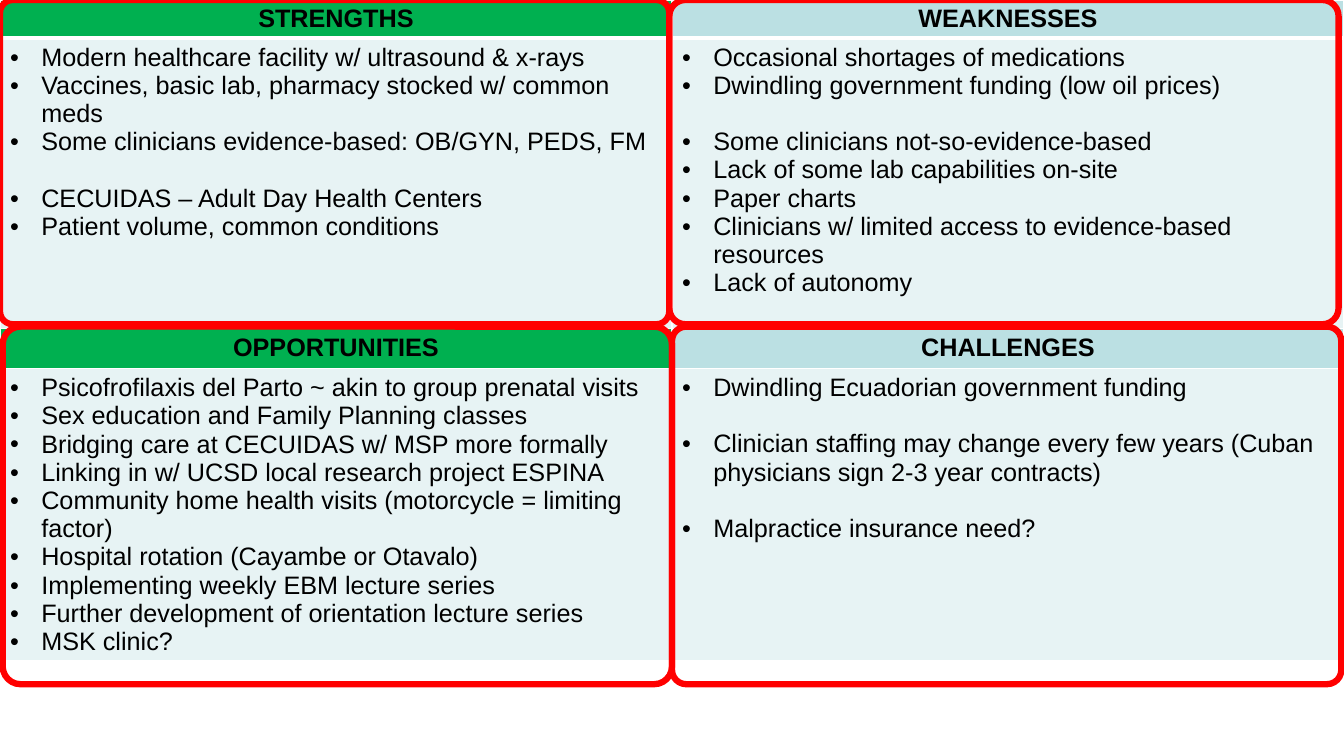
from dataclasses import dataclass

from lxml import etree
from pptx import Presentation
from pptx.dml.color import RGBColor
from pptx.enum.shapes import MSO_SHAPE
from pptx.enum.text import PP_ALIGN
from pptx.oxml.ns import qn
from pptx.slide import Slide
from pptx.table import _Cell
from pptx.util import Inches, Pt

CENTER, LEFT = PP_ALIGN.CENTER, PP_ALIGN.LEFT
ROUNDED = MSO_SHAPE.ROUNDED_RECTANGLE
PAGE_WIDTH, PAGE_HEIGHT = Inches(13.33), Inches(7.5)
GRID_STEPS = 100
ROW_STEPS = (4.8, 38.4, 5.3, 38.4)
FONT, TEXT_SIZE, GAP = "Arial", Pt(18), Pt(20)
BULLET_INDENT = Inches(0.31)
BLACK, WHITE, RED = "000000", "FFFFFF", "FF0000"
GREEN, TEAL, PALE = "00B050", "BBE0E3", "E7F3F4"


@dataclass(frozen=True)
class Quadrant:
    """One SWOT quarter: its heading, groups of bullets, and frame on the grid."""
    heading: str
    color: str
    groups: tuple[tuple[str, ...], ...]
    frame: tuple[float, float, float, float]
    rounding: float


QUADRANTS = (
    Quadrant("STRENGTHS", GREEN, (
        ("Modern healthcare facility w/ ultrasound & x-rays",
         "Vaccines, basic lab, pharmacy stocked w/ common meds",
         "Some clinicians evidence-based: OB/GYN, PEDS, FM"),
        ("CECUIDAS – Adult Day Health Centers",
         "Patient volume, common conditions"),
    ), (0, 0, 49.8, 42.9), 0.04),
    Quadrant("WEAKNESSES", TEAL, (
        ("Occasional shortages of medications",
         "Dwindling government funding (low oil prices)"),
        ("Some clinicians not-so-evidence-based",
         "Lack of some lab capabilities on-site",
         "Paper charts",
         "Clinicians w/ limited access to evidence-based resources",
         "Lack of autonomy"),
    ), (49.8, 0, 49.8, 42.9), 0.05),
    Quadrant("OPPORTUNITIES", GREEN, (
        ("Psicofrofilaxis del Parto ~ akin to group prenatal visits",
         "Sex education and Family Planning classes",
         "Bridging care at CECUIDAS w/ MSP more formally",
         "Linking in w/ UCSD local research project ESPINA",
         "Community home health visits (motorcycle = limiting factor)",
         "Hospital rotation (Cayambe or Otavalo)",
         "Implementing weekly EBM lecture series",
         "Further development of orientation lecture series",
         "MSK clinic?"),
    ), (0.2, 43.2, 49.8, 47.3), 0.05),
    Quadrant("CHALLENGES", TEAL, (
        ("Dwindling Ecuadorian government funding",),
        ("Clinician staffing may change every few years "
         "(Cuban physicians sign 2-3 year contracts)",),
        ("Malpractice insurance need?",),
    ), (50, 43.2, 49.8, 47.3), 0.04),
)


def across(steps: float) -> int:
    """Turn grid columns into a length."""
    return round(PAGE_WIDTH * steps / GRID_STEPS)


def down(steps: float) -> int:
    """Turn grid rows into a length."""
    return round(PAGE_HEIGHT * steps / GRID_STEPS)


def color(code: str) -> RGBColor:
    """Turn a hex string into a colour."""
    return RGBColor.from_string(code)


def style_cell(cell: _Cell, fill: str, top: float, bottom: float) -> None:
    """Fill a cell and give it white borders, widths in points."""
    cell.fill.solid()
    cell.fill.fore_color.rgb = color(fill)
    properties = cell._tc.get_or_add_tcPr()
    borders = (("a:lnL", 1), ("a:lnR", 1), ("a:lnT", top), ("a:lnB", bottom))
    for position, (tag, width) in enumerate(borders):
        border = etree.Element(qn(tag), w=str(Pt(width)))
        solid = etree.SubElement(border, qn("a:solidFill"))
        etree.SubElement(solid, qn("a:srgbClr"), val=WHITE)
        properties.insert(position, border)


def write_lines(cell: _Cell, groups: tuple[tuple[str, ...], ...], heading: bool) -> None:
    """Write a bold heading or bulleted groups that are set apart by a gap."""
    cell.text_frame.text = "\n".join(line for group in groups for line in group)
    openings = [index == 0 for group in groups for index in range(len(group))]
    for index, para in enumerate(cell.text_frame.paragraphs):
        para.alignment = CENTER if heading else LEFT
        if index and openings[index]:
            para.space_before = GAP
        if not heading:
            properties = para._p.get_or_add_pPr()
            properties.set("marL", str(BULLET_INDENT))
            properties.set("indent", str(-BULLET_INDENT))
            etree.SubElement(properties, qn("a:buFont"), typeface=FONT)
            etree.SubElement(properties, qn("a:buChar"), char="•")
        for span in para.runs:
            span.font.name = FONT
            span.font.size = TEXT_SIZE
            span.font.bold = heading
            span.font.color.rgb = color(BLACK)


def add_matrix(page: Slide) -> None:
    """Add the table with a heading row and a bullet row for each pair of quadrants."""
    table = page.shapes.add_table(
        len(ROW_STEPS), 2, 0, 0, PAGE_WIDTH, down(sum(ROW_STEPS))).table
    table.first_row = False
    table.horz_banding = False
    for row, steps in zip(table.rows, ROW_STEPS):
        row.height = down(steps)
    for index, quadrant in enumerate(QUADRANTS):
        band, column = divmod(index, 2)
        rule = 1 if band else 3
        title, body = (table.cell(2 * band + part, column) for part in (0, 1))
        style_cell(title, quadrant.color, 1, rule)
        style_cell(body, PALE, rule, 1)
        write_lines(title, ((quadrant.heading,),), True)
        write_lines(body, quadrant.groups, False)


def add_frame(page: Slide, quadrant: Quadrant) -> None:
    """Outline a quadrant with a rounded red frame."""
    left, top, width, height = quadrant.frame
    frame = page.shapes.add_shape(
        ROUNDED, across(left), down(top), across(width), down(height))
    frame.adjustments[0] = quadrant.rounding
    frame.shadow.inherit = False
    frame.fill.background()
    frame.line.color.rgb = color(RED)
    frame.line.width = Pt(4.5)


def main() -> None:
    """Build the SWOT slide and save it."""
    deck = Presentation()
    deck.slide_width, deck.slide_height = PAGE_WIDTH, PAGE_HEIGHT
    page = deck.slides.add_slide(deck.slide_layouts[6])
    add_matrix(page)
    for quadrant in QUADRANTS:
        add_frame(page, quadrant)
    deck.save("out.pptx")


if __name__ == "__main__":
    main()
